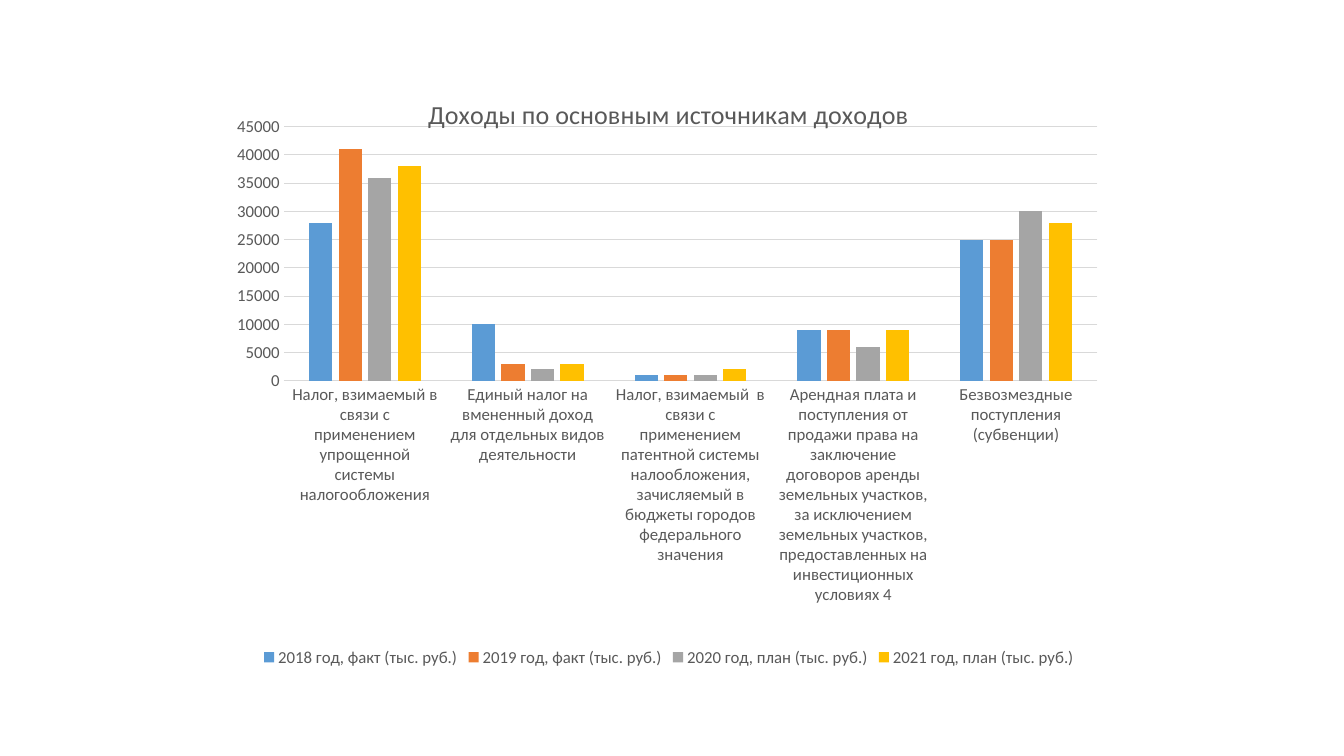
from lxml import etree
from pptx import Presentation
from pptx.chart.data import CategoryChartData
from pptx.dml.color import RGBColor
from pptx.enum.chart import XL_CHART_TYPE, XL_LEGEND_POSITION, XL_TICK_MARK
from pptx.oxml.ns import qn
from pptx.util import Inches, Pt

COLUMNS = XL_CHART_TYPE.COLUMN_CLUSTERED
BOTTOM = XL_LEGEND_POSITION.BOTTOM
NO_TICK = XL_TICK_MARK.NONE
FONT = "Calibri"
COLORS = {"text": "595959", "grid": "D9D9D9"}

TITLE = "Доходы по основным источникам доходов"
CATEGORIES = [
    "Налог, взимаемый в связи с применением упрощенной системы налогообложения",
    "Единый налог на вмененный доход для отдельных видов деятельности",
    "Налог, взимаемый  в связи с применением патентной системы налообложения, "
    "зачисляемый в бюджеты городов федерального значения",
    "Арендная плата и поступления от продажи права на заключение договоров "
    "аренды земельных участков, за исключением земельных участков, "
    "предоставленных на инвестиционных условиях 4",
    "Безвозмездные поступления (субвенции)",
]
# Series name, colour, values
SERIES = [
    ("2018 год, факт (тыс. руб.)", "5B9BD5", (28000, 10000, 1000, 9000, 25000)),
    ("2019 год, факт (тыс. руб.)", "ED7D31", (41000, 3000, 1000, 9000, 25000)),
    ("2020 год, план (тыс. руб.)", "A5A5A5", (36000, 2000, 1000, 6000, 30000)),
    ("2021 год, план (тыс. руб.)", "FFC000", (38000, 3000, 2000, 9000, 28000)),
]


def set_font(font, size):
    font.name, font.size, font.bold = FONT, Pt(size), False
    font.color.rgb = RGBColor.from_string(COLORS["text"])


def set_line(line):
    line.width = Pt(0.75)
    line.color.rgb = RGBColor.from_string(COLORS["grid"])


def set_layout(parent, index, **settings):
    """Place a chart part by fractions of the chart area."""
    for old in parent.findall(qn("c:layout")):
        parent.remove(old)
    layout = etree.Element(qn("c:layout"))
    manual = etree.SubElement(layout, qn("c:manualLayout"))
    for name, value in settings.items():
        etree.SubElement(manual, qn(f"c:{name}")).set("val", str(value))
    parent.insert(index, layout)


def add_income_chart(s, x, y, w, h):
    data = CategoryChartData()
    data.categories = CATEGORIES
    for name, _, values in SERIES:
        data.add_series(name, values)
    chart = s.shapes.add_chart(COLUMNS, x, y, w, h, data).chart
    set_font(chart.font, 12)

    # Title
    title = chart.chart_title
    p = title.text_frame.paragraphs[0]
    p.text = TITLE
    set_font(p.font, 18.6)
    title.include_in_layout = False
    set_layout(title._element, 1, xMode="edge", yMode="edge", x=0.226, y=0.03)

    # Columns
    plot = chart.plots[0]
    plot.gap_width, plot.overlap, plot.vary_by_categories = 219, -27, False
    for series, (_, color, _) in zip(plot.series, SERIES):
        series.format.fill.solid()
        series.format.fill.fore_color.rgb = RGBColor.from_string(color)
    plot_area = chart._chartSpace.chart.plotArea
    set_layout(plot_area, 0, layoutTarget="inner", xMode="edge", yMode="edge",
               x=0.07, y=0.089, w=0.908, h=0.425)

    # Axes
    for axis in (chart.category_axis, chart.value_axis):
        axis.major_tick_mark = axis.minor_tick_mark = NO_TICK
        set_font(axis.tick_labels.font, 12)
    set_line(chart.category_axis.format.line)
    value_axis = chart.value_axis
    value_axis.minimum_scale, value_axis.maximum_scale = 0, 45000
    value_axis.major_unit = 5000
    value_axis.format.line.fill.background()
    set_line(value_axis.major_gridlines.format.line)

    # Legend
    chart.has_legend = True
    chart.legend.position = BOTTOM
    chart.legend.include_in_layout = False
    set_font(chart.legend.font, 12)


def main():
    prs = Presentation()
    prs.slide_width, prs.slide_height = Inches(13.33), Inches(7.5)
    s = prs.slides.add_slide(prs.slide_layouts[6])
    add_income_chart(s, Inches(2.19), Inches(0.73), Inches(8.89), Inches(5.93))
    prs.save("out.pptx")


if __name__ == "__main__":
    main()
